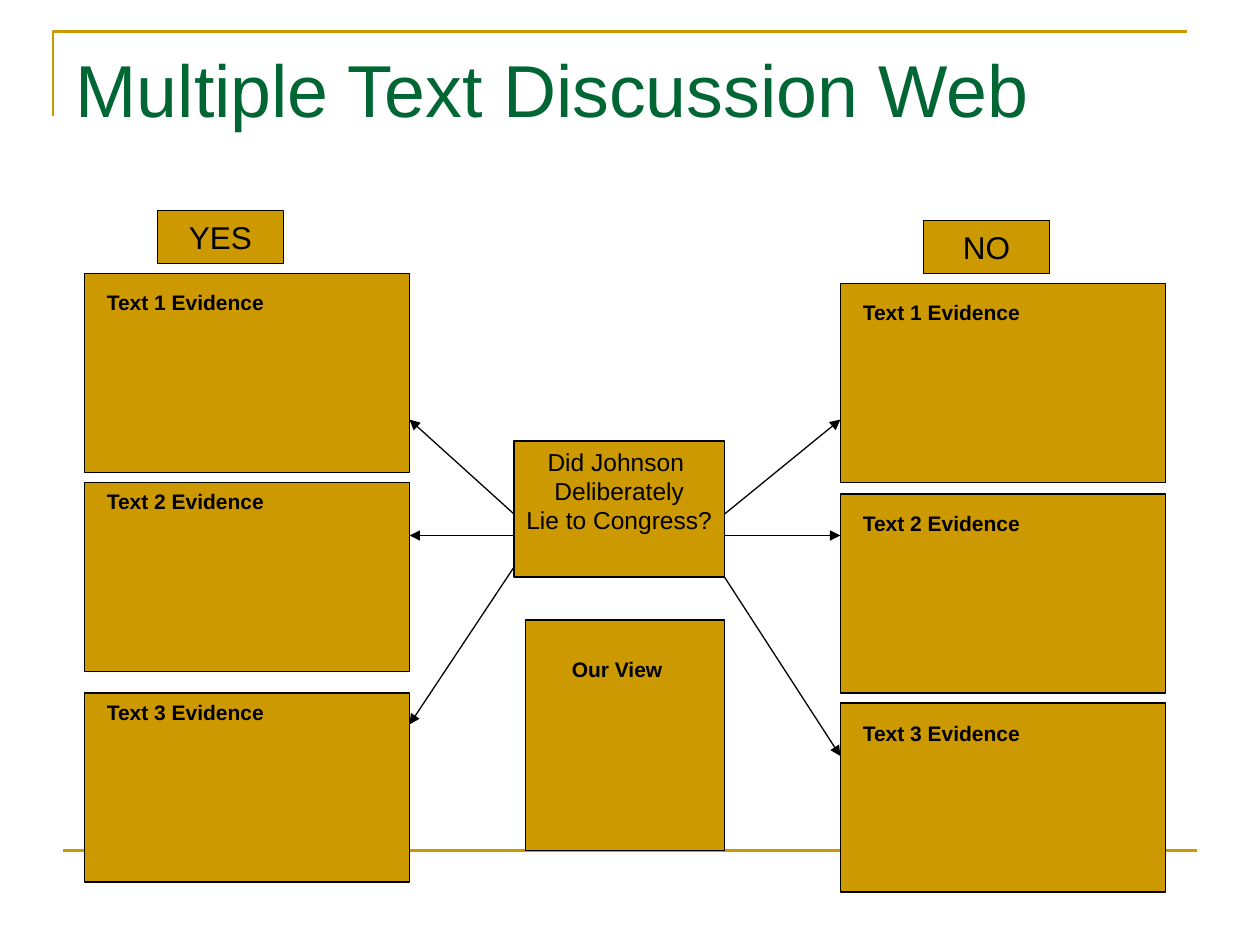
from pptx import Presentation
from pptx.dml.color import RGBColor
from pptx.enum.shapes import MSO_CONNECTOR as Link, MSO_SHAPE as Kind
from pptx.enum.text import MSO_ANCHOR as Anchor, MSO_AUTO_SIZE as Fit, PP_ALIGN as Align
from pptx.oxml.ns import qn
from pptx.util import Inches, Pt
from lxml.etree import SubElement

GOLD, GREEN, BLACK = "CC9900", "006633", "000000"


def color(code):
    """Turn a hex string into a colour."""
    return RGBColor.from_string(code)


def put(item, **look):
    """Set each attribute named in look."""
    for name, value in look.items():
        setattr(item, name, value)


def stroke(line, code, width):
    """Give a line its colour and width."""
    line.color.rgb = color(code)
    line.width = Pt(width)


def write(shape, lines, size, code=BLACK, bold=False, align=Align.LEFT, **look):
    """Fill a text frame with one paragraph per line."""
    frame = shape.text_frame
    frame.text = "\n".join(lines)
    put(frame, **look)
    for para in frame.paragraphs:
        para.alignment = align
        for run in para.runs:
            put(run.font, name="Arial", size=Pt(size), bold=bold)
            run.font.color.rgb = color(code)


def box(slide, *area):
    """Add a gold box with a black edge."""
    shape = slide.shapes.add_shape(Kind.RECTANGLE, *map(Inches, area))
    shape.shadow.inherit = False
    shape.fill.solid()
    shape.fill.fore_color.rgb = color(GOLD)
    stroke(shape.line, BLACK, 0.75)
    return shape


def sign(slide, area, lines, size, **look):
    """Add a gold box with centred text."""
    write(box(slide, *area), lines, size, align=Align.CENTER,
          vertical_anchor=Anchor.MIDDLE, word_wrap=False, **look)


def label(slide, left, top, width, text):
    """Add a bold caption."""
    shape = slide.shapes.add_textbox(*map(Inches, (left, top, width, 0.3)))
    write(shape, [text], 12, bold=True, word_wrap=True,
          auto_size=Fit.SHAPE_TO_FIT_TEXT)


def rule(slide, start, end, code=BLACK, width=0.75, arrow=True):
    """Add a straight line, with an arrowhead at its end if asked."""
    link = slide.shapes.add_connector(Link.STRAIGHT, *map(Inches, start + end))
    stroke(link.line, code, width)
    if arrow:
        SubElement(link.line._get_or_add_ln(), qn("a:tailEnd"), type="triangle")
    SubElement(link._element.spPr, qn("a:effectLst"))


def corner(slide):
    """Add the open gold frame around the title."""
    pen = slide.shapes.build_freeform(Inches(0.42), Inches(0.92))
    pen.add_line_segments([(Inches(0.42), Inches(0.25)),
                           (Inches(9.42), Inches(0.25))], close=False)
    shape = pen.convert_to_shape()
    shape.shadow.inherit = False
    shape.fill.background()
    stroke(shape.line, GOLD, 1.5)


def heading(slide, text):
    """Place and format the title."""
    title = slide.shapes.title
    put(title, left=Inches(0.5), top=Inches(0.3),
        width=Inches(9), height=Inches(1.25))
    write(title, [text], 42, GREEN, vertical_anchor=Anchor.TOP, word_wrap=True)


def side(slide, left, rows):
    """Add one column of evidence boxes from (top, height, caption top)."""
    for num, (top, height, text) in enumerate(rows, 1):
        box(slide, left, top, 2.58, height)
        label(slide, left + 0.08, text, 1.73, f"Text {num} Evidence")


def main():
    """Build the discussion web."""
    deck = Presentation()
    put(deck, slide_width=Inches(10), slide_height=Inches(7.5))
    slide = deck.slides.add_slide(deck.slide_layouts[5])
    corner(slide)
    rule(slide, (0.5, 6.75), (9.5, 6.75), GOLD, 1.5, arrow=False)
    heading(slide, "Multiple Text Discussion Web")

    sign(slide, (4.08, 3.5, 1.67, 1.08),
         ["Did Johnson ", "Deliberately", "Lie to Congress?"], 14,
         margin_bottom=Inches(0.34))
    sign(slide, (1.25, 1.67, 1, 0.42), ["YES"], 18)
    sign(slide, (7.33, 1.75, 1, 0.42), ["NO"], 18)
    side(slide, 0.67, [(2.17, 1.58, 2.25), (3.83, 1.5, 3.83), (5.5, 1.5, 5.5)])
    side(slide, 6.67, [(2.25, 1.58, 2.33), (3.92, 1.58, 4), (5.58, 1.5, 5.67)])
    box(slide, 4.17, 4.92, 1.58, 1.83)
    label(slide, 4.44, 5.16, 1.14, "Our View")

    for near, far, ends in (
        (4.08, 3.25, [(4.25, 4.25), (4.08, 3.33), (4.5, 5.75)]),
        (5.75, 6.67, [(4.25, 4.25), (4.08, 3.33), (4.58, 6)]),
    ):
        for start, end in ends:
            rule(slide, (near, start), (far, end))
    deck.save("out.pptx")


if __name__ == "__main__":
    main()
